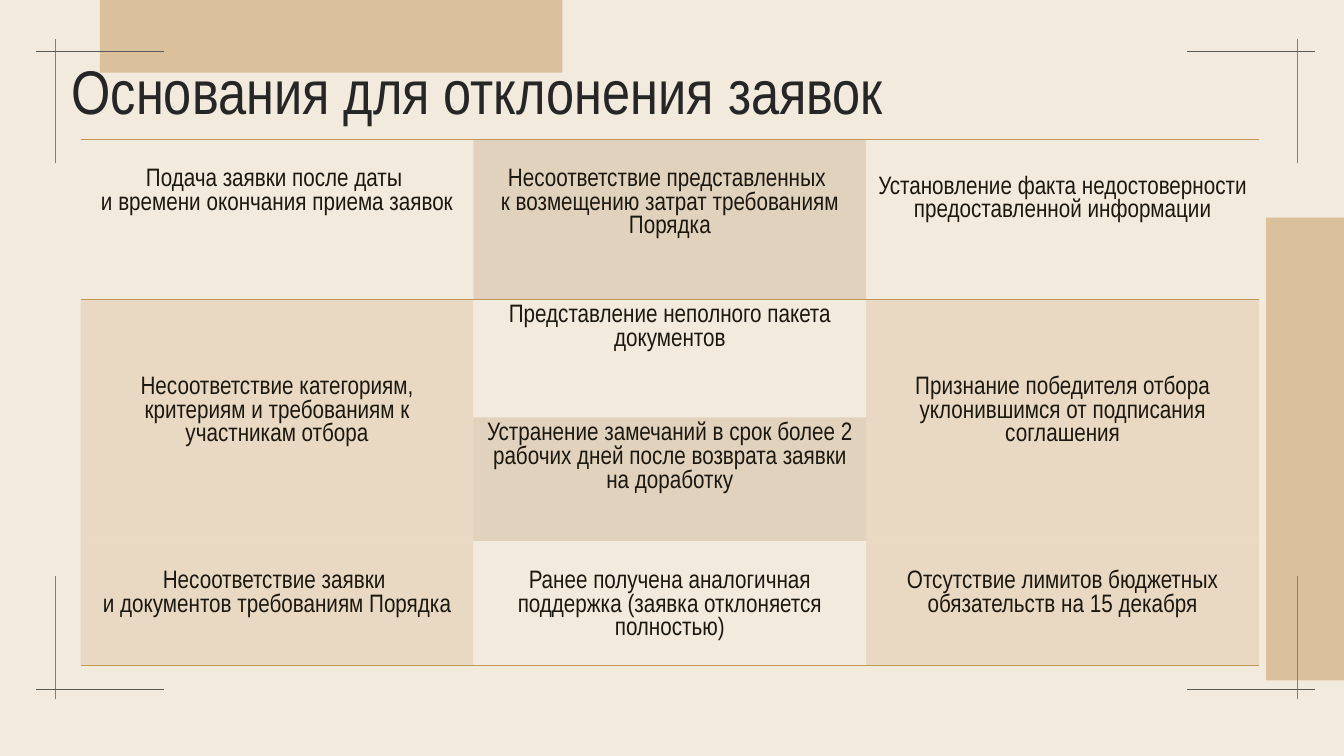
from pptx import Presentation
from pptx.dml.color import RGBColor
from pptx.enum.shapes import MSO_CONNECTOR, MSO_SHAPE
from pptx.enum.text import MSO_ANCHOR, MSO_AUTO_SIZE, PP_ALIGN
from pptx.oxml.ns import qn
from pptx.util import Pt
from lxml.etree import SubElement

COLORS = {
    "paper": "F3EADE",
    "block": "DAC19B",
    "upright": "808080",
    "level": "595959",
    "title": "262626",
    "text": "1B1810",
    "gold": "C19859",
    "brown": "9A743A",
}
FONT = "Arial Narrow"


def color(name):
    return RGBColor.from_string(COLORS[name])


def add_span(para, text, size, color_name):
    span = para.add_run()
    span.text = text
    span.font.name = FONT
    span.font.size = Pt(size)
    span.font.color.rgb = color(color_name)


deck = Presentation()
deck.slide_width, deck.slide_height = Pt(960), Pt(540)
page = deck.slides.add_slide(deck.slide_layouts[5])
page.background.fill.solid()
page.background.fill.fore_color.rgb = color("paper")

# Sand blocks on the right and top edges
for left, top, turn in [(774.7, 285.1, 90), (71.3, -19.4, 0)]:
    block = page.shapes.add_shape(
        MSO_SHAPE.RECTANGLE, Pt(left), Pt(top), Pt(330.5), Pt(71.3))
    block.rotation = turn
    block.shadow.inherit = False
    block.fill.solid()
    block.fill.fore_color.rgb = color("block")
    block.line.fill.background()

# Crossed lines in the four corners
for cross_x, level_left in [(39.6, 25.9), (926.6, 848.2)]:
    for cross_y, upright_top in [(36.7, 28.1), (492.5, 411.1)]:
        for ends, name in [
            ((cross_x, upright_top, cross_x, upright_top + 88.5), "upright"),
            ((level_left, cross_y, level_left + 91.4, cross_y), "level"),
        ]:
            line = page.shapes.add_connector(
                MSO_CONNECTOR.STRAIGHT, *[Pt(end) for end in ends])
            line.line.width = Pt(1)
            line.line.color.rgb = color(name)
            SubElement(line._element.spPr, qn("a:effectLst"))

# Title
title = page.shapes.title
title.left, title.top, title.width, title.height = Pt(43.9), Pt(36), Pt(828), Pt(63.4)
frame = title.text_frame
frame.word_wrap = True
frame.auto_size = MSO_AUTO_SIZE.NONE
frame.vertical_anchor = MSO_ANCHOR.MIDDLE
para = frame.paragraphs[0]
para.alignment = PP_ALIGN.LEFT
para.line_spacing = 0.9
add_span(para, "Основания для отклонения заявок", 44, "title")

# Table of grounds: row, column, top margin, fill, text
ONE_LINE, THREE_LINES = 20.7, 54.9
GROUNDS = [
    (0, 0, ONE_LINE, None, "Подача заявки после даты \nи времени окончания приема заявок"),
    (0, 1, ONE_LINE, "brown",
     "Несоответствие представленных \nк возмещению затрат требованиям Порядка"),
    (0, 2, 26.2, None, "Установление факта недостоверности предоставленной информации"),
    (1, 0, THREE_LINES, "gold",
     "Несоответствие категориям, критериям и требованиям к участникам отбора"),
    (1, 1, 3.6, "paper", "Представление неполного пакета документов"),
    (1, 2, THREE_LINES, "gold",
     "Признание победителя отбора уклонившимся от подписания соглашения"),
    (2, 1, 3.6, "brown",
     "Устранение замечаний в срок более 2 рабочих дней после возврата заявки на доработку"),
    (3, 0, ONE_LINE, "gold", "Несоответствие заявки \nи документов требованиям Порядка"),
    (3, 1, ONE_LINE, "paper",
     "Ранее получена аналогичная поддержка (заявка отклоняется полностью)"),
    (3, 2, ONE_LINE, "gold", "Отсутствие лимитов бюджетных обязательств на 15 декабря"),
]
BORDERS = {0: ["a:lnT", "a:lnB"], 3: ["a:lnB"]}

table = page.shapes.add_table(
    4, 3, Pt(57.6), Pt(99.4), Pt(841.8), Pt(375.9)).table
table.first_row = table.horz_banding = False
style = table._tbl.tblPr.find(qn("a:tableStyleId"))
style.text = "{2D5ABB26-0587-4C30-8999-92F81FD0307C}"
for column in table.columns:
    column.width = Pt(280.6)
for row, height in zip(table.rows, [114.5, 84.2, 88.6, 88.6]):
    row.height = Pt(height)
for side in (0, 2):
    table.cell(1, side).merge(table.cell(2, side))

for row, column, margin, fill, text in GROUNDS:
    cell = table.cell(row, column)
    cell.margin_top = Pt(margin)
    properties = cell._tc.get_or_add_tcPr()

    # Borders go before the fill
    for edge in BORDERS.get(row, []):
        border = SubElement(properties, qn(edge), w=str(Pt(1)))
        solid = SubElement(border, qn("a:solidFill"))
        SubElement(solid, qn("a:srgbClr"), val=COLORS["gold"])
    if fill:
        cell.fill.solid()
        cell.fill.fore_color.rgb = color(fill)
    else:
        cell.fill.background()
    if fill in ("gold", "brown"):
        tint = properties.find(qn("a:solidFill")).find(qn("a:srgbClr"))
        SubElement(tint, qn("a:alpha"), val="20000")

    para = cell.text_frame.paragraphs[0]
    para.alignment = PP_ALIGN.CENTER
    for number, part in enumerate(text.split("\n")):
        if number:
            para.add_line_break()
        add_span(para, part, 18, "text")

deck.save("out.pptx")
